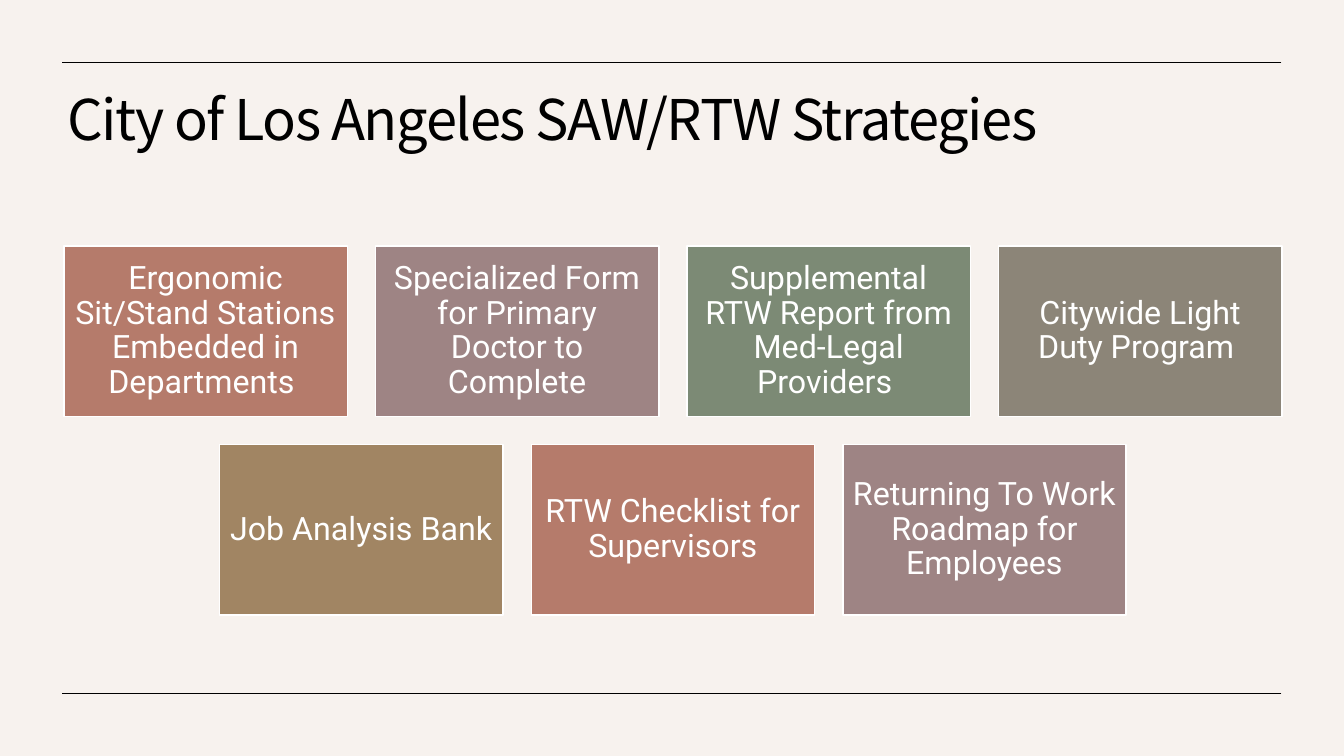
from lxml import etree
from pptx import Presentation
from pptx import util as u
from pptx.dml.color import RGBColor
from pptx.enum import shapes, text
from pptx.oxml.ns import qn

COLORS = {
    "background": "F7F2EE", "ink": "000000", "white": "FFFFFF",
    "clay": "B57B6B", "mauve": "9E8484", "sage": "7C8A75",
    "stone": "8C8578", "ochre": "A18563",
}
BODY_FONT = "Roboto"
TITLE_FONT = "Noto Sans CJK KR"
STRATEGY_ROWS = [
    [
        ("Ergonomic Sit/Stand Stations Embedded in Departments ", "clay"),
        ("Specialized Form for Primary Doctor to Complete", "mauve"),
        ("Supplemental RTW Report from Med-Legal Providers ", "sage"),
        ("Citywide Light Duty Program ", "stone"),
    ],
    [
        ("Job Analysis Bank ", "ochre"),
        ("RTW Checklist for Supervisors", "clay"),
        ("Returning To Work Roadmap for Employees", "mauve"),
    ],
]


def color(name):
    """Return the named colour."""
    return RGBColor.from_string(COLORS[name])


def style_font(p, name, size, ink):
    """Set the font of a paragraph."""
    p.font.name = name
    p.font.size = u.Pt(size)
    p.font.color.rgb = color(ink)


def add_title(s, title, left, top, width, height):
    """Add the slide title in its box."""
    tf = s.shapes.add_textbox(*map(u.Inches, (left, top, width, height))).text_frame
    tf.word_wrap = True
    p = tf.paragraphs[0]
    p.line_spacing = 0.9
    style_font(p, TITLE_FONT, 40, "ink")
    r = p.add_run()
    r.text = title
    r.font._element.set("spc", "-100")


def add_rules(s, left, top, width, height):
    """Draw thin rules along the top and bottom of the box."""
    for y in (top, top + height):
        rule = s.shapes.add_connector(
            shapes.MSO_CONNECTOR.STRAIGHT,
            *map(u.Inches, (left + width, y, left, y)))
        rule.line.color.rgb = color("ink")
        rule.line.width = u.Pt(0.5)
        etree.SubElement(rule._element.spPr, qn("a:effectLst"))


def add_card(s, label, fill, left, top, width, height):
    """Add one strategy card."""
    sp = s.shapes.add_shape(
        shapes.MSO_SHAPE.RECTANGLE, *map(u.Inches, (left, top, width, height)))
    sp.shadow.inherit = False
    sp.fill.solid()
    sp.fill.fore_color.rgb = color(fill)
    sp.line.color.rgb = color("white")
    sp.line.width = u.Pt(1)
    tf = sp.text_frame
    tf.word_wrap = True
    tf.vertical_anchor = text.MSO_ANCHOR.MIDDLE
    tf.margin_left = tf.margin_right = tf.margin_top = tf.margin_bottom = u.Inches(0.1)
    p = tf.paragraphs[0]
    p.text = label
    p.alignment = text.PP_ALIGN.CENTER
    p.line_spacing = 0.9
    style_font(p, BODY_FONT, 23, "white")


def add_cards(s, rows, left, top, width, card_w=2.81, card_h=1.69, gap=0.28):
    """Lay out rows of cards, each row centred in the width."""
    for i, row in enumerate(rows):
        row_w = len(row) * (card_w + gap) - gap
        x = left + (width - row_w) / 2
        y = top + i * (card_h + gap)
        for j, (label, fill) in enumerate(row):
            add_card(s, label, fill, x + j * (card_w + gap), y, card_w, card_h)


def main():
    """Build and save the strategies slide."""
    prs = Presentation()
    prs.slide_width, prs.slide_height = u.Inches(13.33), u.Inches(7.5)
    s = prs.slides.add_slide(prs.slide_layouts[6])
    s.background.fill.solid()
    s.background.fill.fore_color.rgb = color("background")
    add_title(s, "City of Los Angeles SAW/RTW Strategies", 0.57, 0.86, 12.15, 1.15)
    add_rules(s, 0.62, 0.62, 12.09, 6.26)
    add_cards(s, STRATEGY_ROWS, 0.63, 2.44, 12.09)
    prs.save("out.pptx")


if __name__ == "__main__":
    main()
